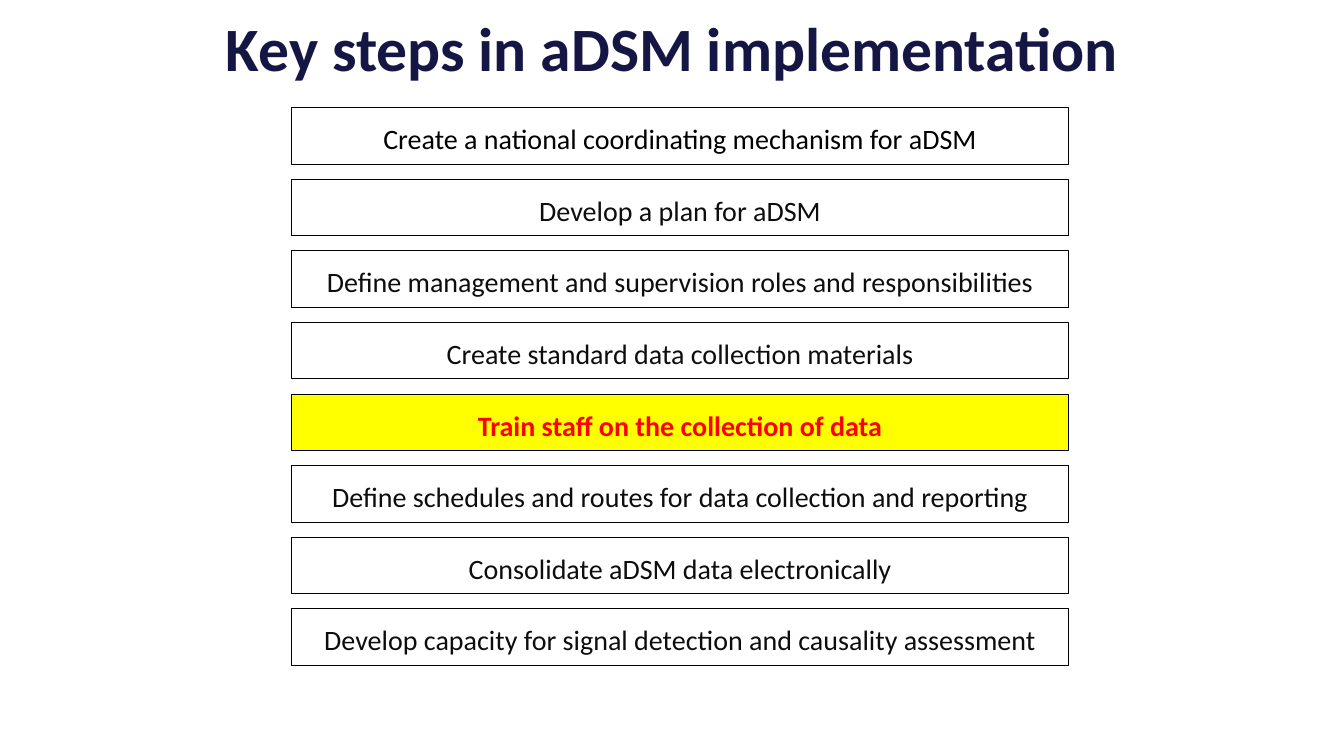
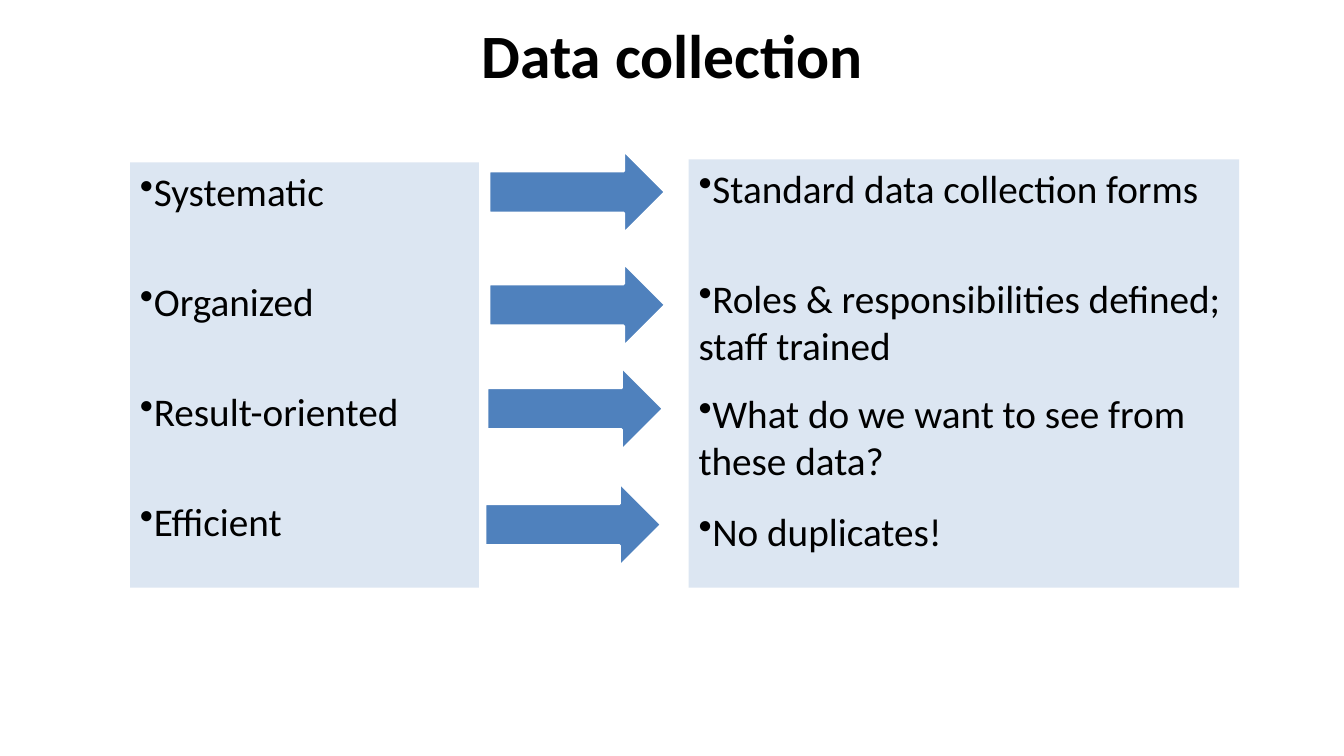
"""Build two slides on aDSM implementation and data collection."""
from dataclasses import dataclass
from typing import Any

from pptx import Presentation
from pptx.dml.color import RGBColor
from pptx.enum.shapes import MSO_SHAPE
from pptx.enum.text import MSO_ANCHOR, MSO_AUTO_SIZE, PP_ALIGN
from pptx.oxml.xmlchemy import OxmlElement
from pptx.util import Inches, Pt

RECTANGLE = MSO_SHAPE.RECTANGLE
RIGHT_ARROW = MSO_SHAPE.RIGHT_ARROW
TOP, MIDDLE = MSO_ANCHOR.TOP, MSO_ANCHOR.MIDDLE
NO_AUTOFIT = MSO_AUTO_SIZE.NONE
LEFT, CENTER = PP_ALIGN.LEFT, PP_ALIGN.CENTER
TITLE_ONLY_LAYOUT = 5


@dataclass(frozen=True)
class Theme:
    """Colours, fonts and sizes used by both slides."""

    font: str = "Calibri"
    title_size: int = 44
    step_size: int = 20
    bullet_size: int = 28
    navy: str = "161645"
    black: str = "000000"
    ink: str = "0D0D0D"
    white: str = "FFFFFF"
    yellow: str = "FFFF00"
    red: str = "FF0000"
    panel: str = "DCE6F2"
    arrow: str = "4F81BD"


THEME = Theme()


@dataclass(frozen=True)
class Box:
    """A position and size in inches."""

    left: float
    top: float
    width: float
    height: float

    def lengths(self) -> tuple[Any, ...]:
        """Return the four values as lengths."""
        return tuple(map(Inches, (self.left, self.top, self.width, self.height)))


@dataclass(frozen=True)
class Step:
    """One step of the implementation list."""

    text: str
    colour: str = THEME.ink
    fill: str = THEME.white
    bold: bool = False


@dataclass(frozen=True)
class Bullet:
    """A bullet and the space in points below it."""

    text: str
    space_after: int = 0


@dataclass(frozen=True)
class Panel:
    """A filled box holding bullets."""

    box: Box
    bullets: tuple[Bullet, ...]


STEPS = (
    Step("Create a national coordinating mechanism for aDSM", THEME.black),
    Step("Develop a plan for aDSM"),
    Step("Define management and supervision roles and responsibilities"),
    Step("Create standard data collection materials"),
    Step("Train staff on the collection of data", THEME.red, THEME.yellow, True),
    Step("Define schedules and routes for data collection and reporting"),
    Step("Consolidate aDSM data electronically"),
    Step("Develop capacity for signal detection and causality assessment"),
)
FIRST_STEP = Box(2.89, 1.07, 7.71, 0.56)
STEP_PITCH = 0.71

PANELS = (
    Panel(Box(1.29, 1.61, 3.46, 4.22), (
        Bullet("Systematic", 45),
        Bullet("Organized", 45),
        Bullet("Result-oriented", 45),
        Bullet("Efficient"),
    )),
    Panel(Box(6.83, 1.58, 5.46, 4.25), (
        Bullet("Standard data collection forms", 45),
        Bullet("Roles & responsibilities defined; staff trained", 15),
        Bullet("What do we want to see from these data?", 17),
        Bullet("No duplicates!"),
    )),
)
ARROWS = tuple(
    Box(left, top, 1.75, 0.83)
    for left, top in ((4.85, 1.49), (4.85, 2.61), (4.83, 3.64), (4.81, 4.79))
)


def apply_format(target: Any, values: dict[str, Any]) -> None:
    """Set each named attribute on the target."""
    for name, value in values.items():
        setattr(target, name, value)


def format_frame(frame: Any, anchor: Any) -> None:
    """Give a text frame the shared margins, wrapping and an anchor."""
    apply_format(frame, {
        "word_wrap": True,
        "auto_size": NO_AUTOFIT,
        "vertical_anchor": anchor,
        "margin_left": Inches(0.1),
        "margin_right": Inches(0.1),
        "margin_top": Inches(0.05),
        "margin_bottom": Inches(0.05),
    })


def add_text(paragraph: Any, text: str, size: int, colour: str, bold: bool = False) -> None:
    """Add one formatted run to a paragraph."""
    run = paragraph.add_run()
    run.text = text
    apply_format(run.font, {"name": THEME.font, "size": Pt(size), "bold": bold})
    run.font.color.rgb = RGBColor.from_string(colour)


def add_title_slide(presentation: Any, text: str, box: Box, colour: str) -> Any:
    """Add a title-only slide with its formatted title."""
    slide = presentation.slides.add_slide(presentation.slide_layouts[TITLE_ONLY_LAYOUT])
    title = slide.shapes.title
    names = ("left", "top", "width", "height")
    apply_format(title, dict(zip(names, box.lengths())))
    format_frame(title.text_frame, TOP)
    paragraph = title.text_frame.paragraphs[0]
    paragraph.alignment = CENTER
    add_text(paragraph, text, THEME.title_size, colour, True)
    return slide


def add_filled_shape(
    slide: Any, kind: Any, box: Box, fill: str, line: str | None = None, width: float = 0.75
) -> Any:
    """Add a flat preset shape with an optional outline."""
    shape = slide.shapes.add_shape(kind, *box.lengths())
    shape.shadow.inherit = False
    shape.fill.solid()
    shape.fill.fore_color.rgb = RGBColor.from_string(fill)
    if line is None:
        shape.line.fill.background()
    else:
        shape.line.color.rgb = RGBColor.from_string(line)
        shape.line.width = Pt(width)
    return shape


def add_step(slide: Any, step: Step, box: Box) -> None:
    """Draw one step as an outlined box."""
    shape = add_filled_shape(slide, RECTANGLE, box, step.fill, THEME.black)
    format_frame(shape.text_frame, MIDDLE)
    paragraph = shape.text_frame.paragraphs[0]
    apply_format(paragraph, {"alignment": CENTER, "line_spacing": 1.15})
    add_text(paragraph, step.text, THEME.step_size, step.colour, step.bold)


def add_panel(slide: Any, panel: Panel) -> None:
    """Draw a panel with its bullets."""
    shape = add_filled_shape(slide, RECTANGLE, panel.box, THEME.panel)
    frame = shape.text_frame
    format_frame(frame, TOP)
    for index, bullet in enumerate(panel.bullets):
        paragraph = frame.add_paragraph() if index else frame.paragraphs[0]
        mark = OxmlElement("a:buChar")
        mark.set("char", "•")
        paragraph._p.get_or_add_pPr().append(mark)
        apply_format(paragraph, {"alignment": LEFT, "space_after": Pt(bullet.space_after)})
        add_text(paragraph, bullet.text, THEME.bullet_size, THEME.black)


def build_steps_slide(presentation: Any) -> None:
    """Build the slide of implementation steps."""
    slide = add_title_slide(
        presentation, "Key steps in aDSM implementation", Box(2.1, 0.05, 9.14, 0.87), THEME.navy
    )
    for index, step in enumerate(STEPS):
        top = FIRST_STEP.top + index * STEP_PITCH
        add_step(slide, step, Box(FIRST_STEP.left, top, FIRST_STEP.width, FIRST_STEP.height))


def build_collection_slide(presentation: Any) -> None:
    """Build the slide linking data qualities to practice."""
    slide = add_title_slide(
        presentation, "Data collection", Box(2.17, 0.12, 9, 1.25), THEME.black
    )
    for panel in PANELS:
        add_panel(slide, panel)
    for box in ARROWS:
        add_filled_shape(slide, RIGHT_ARROW, box, THEME.arrow, THEME.white, 2)


def main() -> None:
    """Build and save the presentation."""
    presentation = Presentation()
    apply_format(presentation, {"slide_width": Inches(13.33), "slide_height": Inches(7.5)})
    build_steps_slide(presentation)
    build_collection_slide(presentation)
    presentation.save("out.pptx")


if __name__ == "__main__":
    main()
